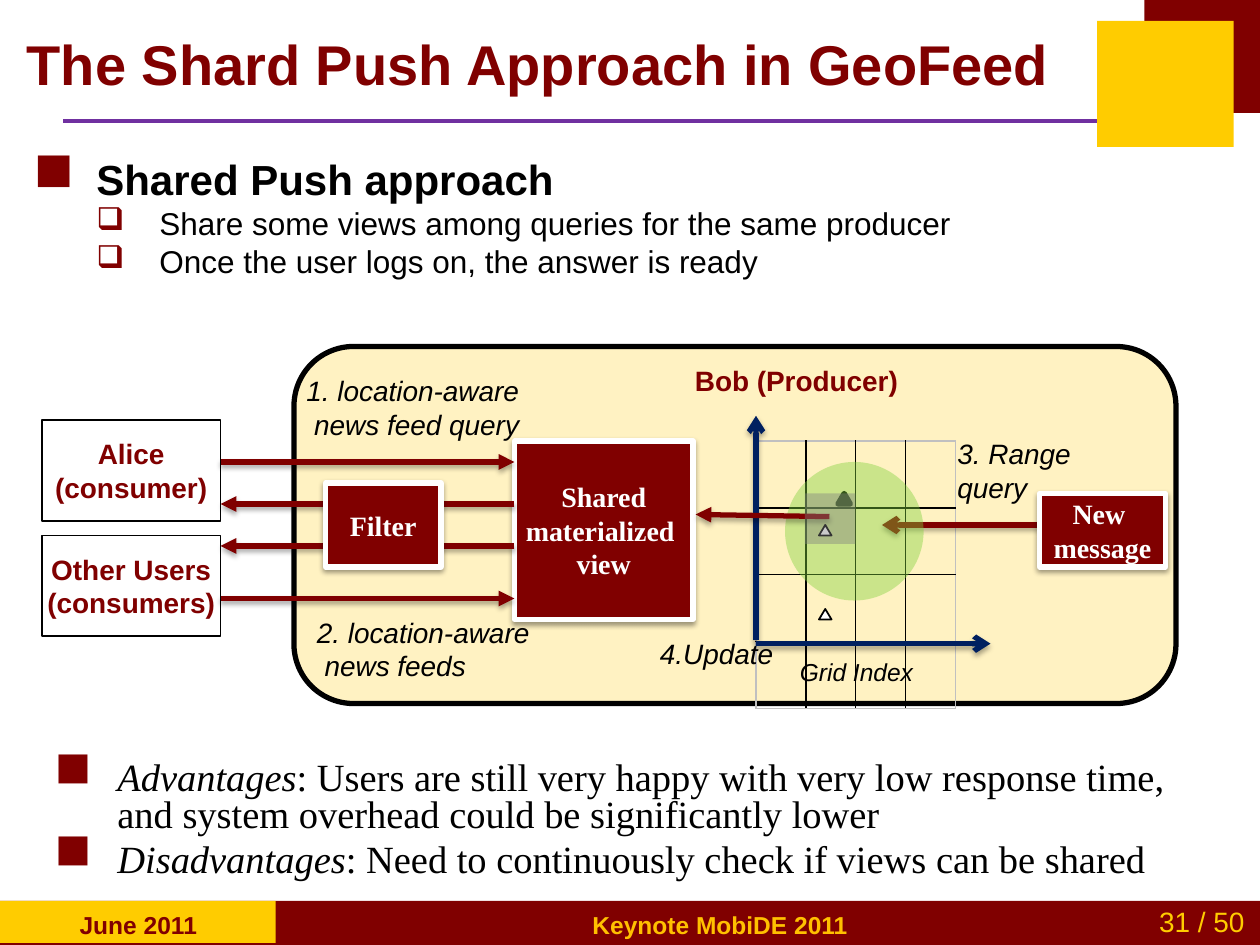
from lxml.etree import SubElement
from pptx import Presentation
from pptx.dml.color import RGBColor
from pptx.enum.shapes import MSO_CONNECTOR as Connector, MSO_SHAPE as Shape
from pptx.enum.text import MSO_ANCHOR as Anchor, PP_ALIGN as Align
from pptx.oxml.ns import qn
from pptx.util import Pt

MAROON = RGBColor(0x80, 0x00, 0x00)
GOLD = RGBColor(0xFF, 0xCC, 0x00)
AMBER = RGBColor(0xFF, 0xC0, 0x00)
PURPLE = RGBColor(0x70, 0x30, 0xA0)
NAVY = RGBColor(0x00, 0x20, 0x60)
GREEN = RGBColor(0x7F, 0xD1, 0x3B)
GRAY = RGBColor(0x80, 0x80, 0x80)
SILVER = RGBColor(0xC0, 0xC0, 0xC0)
BLACK = RGBColor(0x00, 0x00, 0x00)
WHITE = RGBColor(0xFF, 0xFF, 0xFF)

LABEL = dict(name="Arial", size=Pt(16), italic=True, color=BLACK)
ACTOR = dict(name="Arial", size=Pt(16), bold=True, color=MAROON)
PROCESS = dict(name="Times New Roman", size=Pt(16), bold=True, color=WHITE)
FOOTER = dict(name="Arial", size=Pt(14), bold=True, color=MAROON)
TITLE = dict(name="Arial", size=Pt(32), bold=True, color=MAROON)
TOPIC = dict(name="Arial", size=Pt(24), bold=True, color=BLACK)
DETAIL = dict(name="Arial", size=Pt(18), bold=False, color=BLACK)
VERDICT = dict(name="Times New Roman", size=Pt(22), color=BLACK)
TERM = VERDICT | dict(italic=True)


def points(*values):
    return [Pt(value) for value in values]


def child(parent, tag, **attributes):
    return SubElement(parent, qn(tag), {key: str(value) for key, value in attributes.items()})


def set_effects(shape, opacity=0, distance=0):
    effects = child(shape._element.spPr, "a:effectLst")
    if opacity:
        shadow = child(effects, "a:outerShdw", blurRad=Pt(3.1), dist=Pt(distance),
                       dir=90 * 60000, rotWithShape=0)
        color = child(shadow, "a:srgbClr", val=BLACK)
        child(color, "a:alpha", val=opacity * 1000)


def add_run(paragraph, text, style):
    run = paragraph.add_run()
    run.text = text
    for name, value in style.items():
        if name == "color":
            run.font.color.rgb = value
        else:
            setattr(run.font, name, value)


def write_lines(frame, lines, style, align=Align.LEFT):
    for index, line in enumerate(lines):
        paragraph = frame.paragraphs[0] if index == 0 else frame.add_paragraph()
        paragraph.alignment = align
        add_run(paragraph, line, style)


def add_text_box(slide, box, lines, style, align=Align.LEFT, anchor=Anchor.TOP, wrap=True):
    frame = slide.shapes.add_textbox(*points(*box)).text_frame
    frame.word_wrap = wrap
    frame.vertical_anchor = anchor
    write_lines(frame, lines, style, align)


def add_bullets(slide, box, items):
    frame = slide.shapes.add_textbox(*points(*box)).text_frame
    frame.word_wrap = True
    for index, (level, runs) in enumerate(items):
        paragraph = frame.paragraphs[0] if index == 0 else frame.add_paragraph()
        properties = paragraph._p.get_or_add_pPr()
        properties.set("marL", str(Pt(36 * (level + 1))))
        properties.set("indent", str(Pt(-36)))
        child(child(properties, "a:buClr"), "a:srgbClr", val=MAROON)
        child(properties, "a:buSzPct", val=100000 if level else 130000)
        child(properties, "a:buChar", char="❑" if level else "■")
        paragraph.level = level
        paragraph.line_spacing = 0.8
        if index:
            paragraph.space_before = Pt(4.4)
        for text, style in runs:
            add_run(paragraph, text, style)


def add_block(slide, kind, box, fill=None, opacity=100, line=None, width=1):
    shape = slide.shapes.add_shape(kind, *points(*box))
    shape.shadow.inherit = False
    if fill is None:
        shape.fill.background()
    else:
        shape.fill.solid()
        shape.fill.fore_color.rgb = fill
        if opacity < 100:
            color = shape._element.spPr.find(qn("a:solidFill"))[0]
            child(color, "a:alpha", val=opacity * 1000)
    if line is None:
        shape.line.fill.background()
    else:
        shape.line.color.rgb = line
        shape.line.width = Pt(width)
    return shape


def label_block(shape, lines, style):
    frame = shape.text_frame
    frame.word_wrap = False
    frame.vertical_anchor = Anchor.MIDDLE
    write_lines(frame, lines, style, Align.CENTER)


def add_actor(slide, top, lines):
    box = (24, top, 102, 57.6)
    label_block(add_block(slide, Shape.RECTANGLE, box, line=BLACK), lines, ACTOR)


def add_process(slide, box, lines):
    shape = add_block(slide, Shape.RECTANGLE, box, MAROON, line=WHITE, width=3)
    spPr = shape._element.spPr
    spPr.remove(spPr.find(qn("a:effectLst")))
    set_effects(shape, 38, 1.6)
    label_block(shape, lines, PROCESS)


def add_line(slide, ends, color, width=3, head=None):
    line = slide.shapes.add_connector(Connector.STRAIGHT, *points(*ends))
    line.line.color.rgb = color
    line.line.width = Pt(width)
    if head:
        child(line.line._get_or_add_ln(), "a:tailEnd", type=head)
        set_effects(line, 35, 1.8)
    else:
        set_effects(line)


def add_grid(slide, left, top, size, column_width, row_height):
    frame = slide.shapes.add_table(size, size, *points(
        left, top, size * column_width, size * row_height))
    table = frame.table
    table.first_row = table.horz_banding = False
    for column in table.columns:
        column.width = Pt(column_width)
    for row in table.rows:
        row.height = Pt(row_height)
    for row in range(size):
        for column in range(size):
            cell = table.cell(row, column)
            properties = cell._tc.get_or_add_tcPr()
            edges = {"L": column == 0, "R": column == size - 1, "T": row == 0, "B": row == size - 1}
            for side, outer in edges.items():
                border = child(properties, f"a:ln{side}", w=Pt(1))
                child(child(border, "a:solidFill"), "a:srgbClr", val=SILVER if outer else BLACK)
            cell.fill.background()


def add_frame(slide):
    add_line(slide, (36, 69.1, 627, 69.1), PURPLE, 2.25)
    for box, color in [((0, 514.8, 720, 25.2), MAROON), ((0, 514.8, 157.5, 24), GOLD),
                       ((654, 0, 66, 64.5), MAROON), ((627, 12, 78, 72), GOLD)]:
        add_block(slide, Shape.RECTANGLE, box, color)
    for box, text, style in [
            ((8.6, 516.2, 141, 24), "June 2011", FOOTER),
            ((650, 513.4, 73.4, 26.6), "31 / 50", dict(name="Arial", size=Pt(16), color=GOLD)),
            ((312.5, 516.2, 198, 24), "Keynote MobiDE 2011", FOOTER | dict(color=AMBER))]:
        add_text_box(slide, box, [text], style, Align.CENTER)
    add_text_box(slide, (0, 6, 624, 60), ["The Shard Push Approach in GeoFeed "],
                 TITLE, Align.CENTER, Anchor.MIDDLE)


def add_diagram(slide):
    add_block(slide, Shape.ROUNDED_RECTANGLE, (168, 198, 504, 204), GOLD, 24, BLACK, 3)
    add_grid(slide, 432, 252, 4, 28.5, 38.2)
    add_text_box(slide, (390, 204, 132, 26.6), ["Bob (Producer)"], ACTOR, wrap=False)
    add_line(slide, (432, 366, 432, 237.6), NAVY, head="arrow")
    add_line(slide, (432, 367.8, 566, 367.8), NAVY, head="arrow")
    add_text_box(slide, (450, 372, 89.3, 24.2), ["Grid Index"], LABEL | dict(size=Pt(14)))
    add_block(slide, Shape.ISOSCELES_TRIANGLE, (478.8, 282, 7.2, 6), BLACK, line=BLACK, width=3)
    add_line(slide, (594, 300, 504, 300), MAROON, head="arrow")
    add_text_box(slide, (540, 246, 96, 46), ["3. Range", "query"], LABEL)
    add_text_box(slide, (168, 210, 142, 46), ["1. location-aware", " news feed query"],
                 LABEL, wrap=False)
    add_process(slide, (594, 282, 72, 42), ["New ", "message"])
    add_block(slide, Shape.OVAL, (448.6, 264, 79.2, 79.2), GREEN, 41)
    for top in (348, 300):
        add_block(slide, Shape.ISOSCELES_TRIANGLE, (468, top, 7.2, 6), WHITE, line=BLACK)
    add_process(slide, (294, 252, 102, 102), ["Shared", "materialized ", "view"])
    add_actor(slide, 306, ["Other Users", "(consumers)"])
    for start, end, height in [(126, 294, 264), (294, 126, 288), (294, 126, 312), (126, 294, 342)]:
        add_line(slide, (start, height, end, height), MAROON, head="triangle")
    add_text_box(slide, (370, 360, 80, 26.6), ["4.Update"], LABEL, wrap=False)
    add_text_box(slide, (174, 348, 144, 46), ["2. location-aware", " news feeds"], LABEL)
    add_actor(slide, 240, ["Alice", "(consumer)"])
    add_line(slide, (474, 295.2, 397.5, 294), MAROON, head="triangle")
    add_block(slide, Shape.RECTANGLE, (460, 282, 28.8, 28.8), GRAY, 41)
    add_process(slide, (186, 276, 66, 48), ["Filter"])


def main():
    presentation = Presentation()
    presentation.slide_width, presentation.slide_height = points(720, 540)
    slide = presentation.slides.add_slide(presentation.slide_layouts[6])
    add_frame(slide)
    add_bullets(slide, (12, 90, 672, 120), [
        (0, [("Shared Push approach", TOPIC)]),
        (1, [("Share some views among queries for the same producer", DETAIL)]),
        (1, [("Once the user logs on, the answer is ready", DETAIL)])])
    add_bullets(slide, (24, 432, 672, 78), [
        (0, [("Advantages", TERM),
             (": Users are still very happy with very low response time, "
              "and system overhead could be significantly lower", VERDICT)]),
        (0, [("Disadvantages", TERM),
             (": Need to continuously check if views can be shared", VERDICT)])])
    add_diagram(slide)
    presentation.save("out.pptx")


if __name__ == "__main__":
    main()
